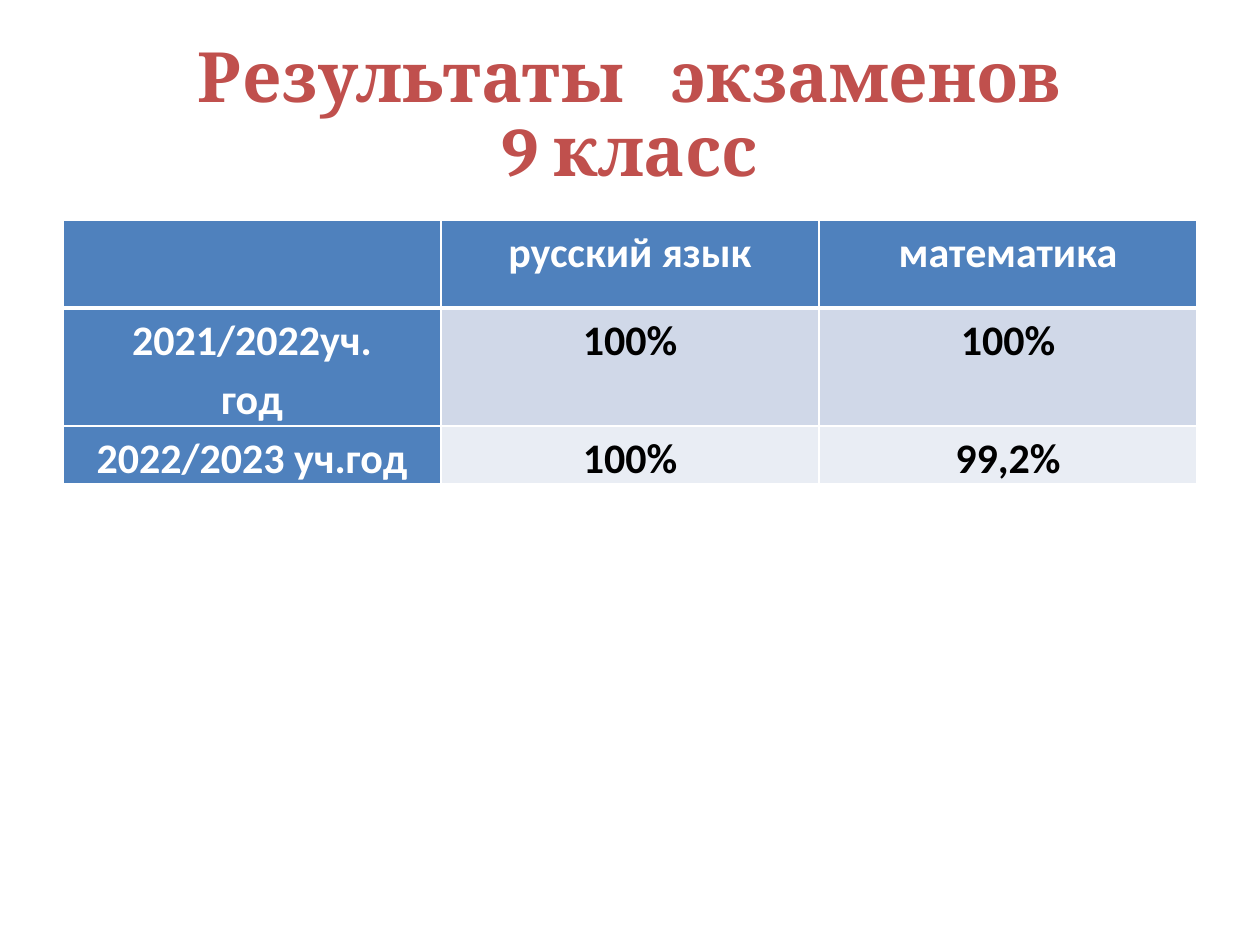
from dataclasses import dataclass

from lxml.etree import SubElement
from pptx import Presentation
from pptx.dml.color import RGBColor
from pptx.enum.text import MSO_ANCHOR, PP_ALIGN
from pptx.oxml.ns import qn
from pptx.util import Emu, Pt


@dataclass(frozen=True)
class Theme:
    """Hold the colours, fonts and type sizes of the slide."""
    title: str = "C0504D"
    header: str = "4F81BD"
    bands: tuple = ("D0D8E8", "E9EDF4")
    light: str = "FFFFFF"
    dark: str = "000000"
    title_font: str = "Cambria"
    table_font: str = "Calibri"
    title_size: float = 39.6
    table_size: float = 24


THEME = Theme()
ROWS = (
    ("", "русский язык", "математика"),
    ("2021/2022уч.\nгод", "100%", "100%"),
    ("2022/2023 уч.год", "100%", "99,2%"),
)
ROW_HEIGHTS = (88, 118, 58)
COLUMN_WIDTH = 378


def px(n):
    """Turn pixels into EMU."""
    return Emu(round(n * 914400 / 126))


def format_paragraph(p, font, size, color, spacing):
    """Centre a paragraph and set the font of its runs."""
    p.alignment = PP_ALIGN.CENTER
    p.line_spacing = spacing
    for r in p.runs:
        r.font.name = font
        r.font.size = Pt(size)
        r.font.bold = True
        r.font.color.rgb = RGBColor.from_string(color)


def add_title(s):
    """Add the two-line title with a widened gap between its first words."""
    tf = s.shapes.add_textbox(px(63), px(38), px(1134), px(158)).text_frame
    tf.word_wrap = True
    tf.vertical_anchor = MSO_ANCHOR.MIDDLE
    p = tf.paragraphs[0]
    p.text = "Результаты"
    gap = p.add_run()
    gap.text = " "
    gap._r.get_or_add_rPr().set("spc", "1800")
    p.add_run().text = "экзаменов"
    p.add_line_break()
    p.add_run().text = "9 класс"
    format_paragraph(p, THEME.title_font, THEME.title_size, THEME.title, 0.9)


def set_borders(cell, bottom, top):
    """Draw the four borders of a cell, with the given horizontal widths."""
    tcPr = cell._tc.get_or_add_tcPr()
    for side, width in (("L", 1), ("R", 1), ("T", top), ("B", bottom)):
        ln = SubElement(tcPr, qn(f"a:ln{side}"), w=str(Pt(width)))
        fill = SubElement(ln, qn("a:solidFill"))
        SubElement(fill, qn("a:srgbClr"), val=THEME.light)


def fill_cell(cell, text, row, col):
    """Write and style one cell by its place in the table."""
    is_header = row == 0 or col == 0
    set_borders(cell, bottom=3 if row == 0 else 1, top=3 if row == 1 else 1)
    cell.fill.solid()
    color = THEME.header if is_header else THEME.bands[row - 1]
    cell.fill.fore_color.rgb = RGBColor.from_string(color)
    cell.margin_top = cell.margin_bottom = 0
    cell.text_frame.text = text
    for p in cell.text_frame.paragraphs:
        format_paragraph(p, THEME.table_font, THEME.table_size,
                         THEME.light if is_header else THEME.dark, 1.15)


def add_results(s):
    """Add the table of exam results."""
    table = s.shapes.add_table(
        len(ROWS), len(ROWS[0]), px(63), px(220),
        px(COLUMN_WIDTH * len(ROWS[0])), px(sum(ROW_HEIGHTS))).table
    for column in table.columns:
        column.width = px(COLUMN_WIDTH)
    for i, (height, texts) in enumerate(zip(ROW_HEIGHTS, ROWS)):
        table.rows[i].height = px(height)
        for j, text in enumerate(texts):
            fill_cell(table.cell(i, j), text, i, j)


def main():
    """Build and save the slide."""
    prs = Presentation()
    prs.slide_width, prs.slide_height = px(1260), px(945)
    s = prs.slides.add_slide(prs.slide_layouts[6])
    add_title(s)
    add_results(s)
    prs.save("out.pptx")


if __name__ == "__main__":
    main()
